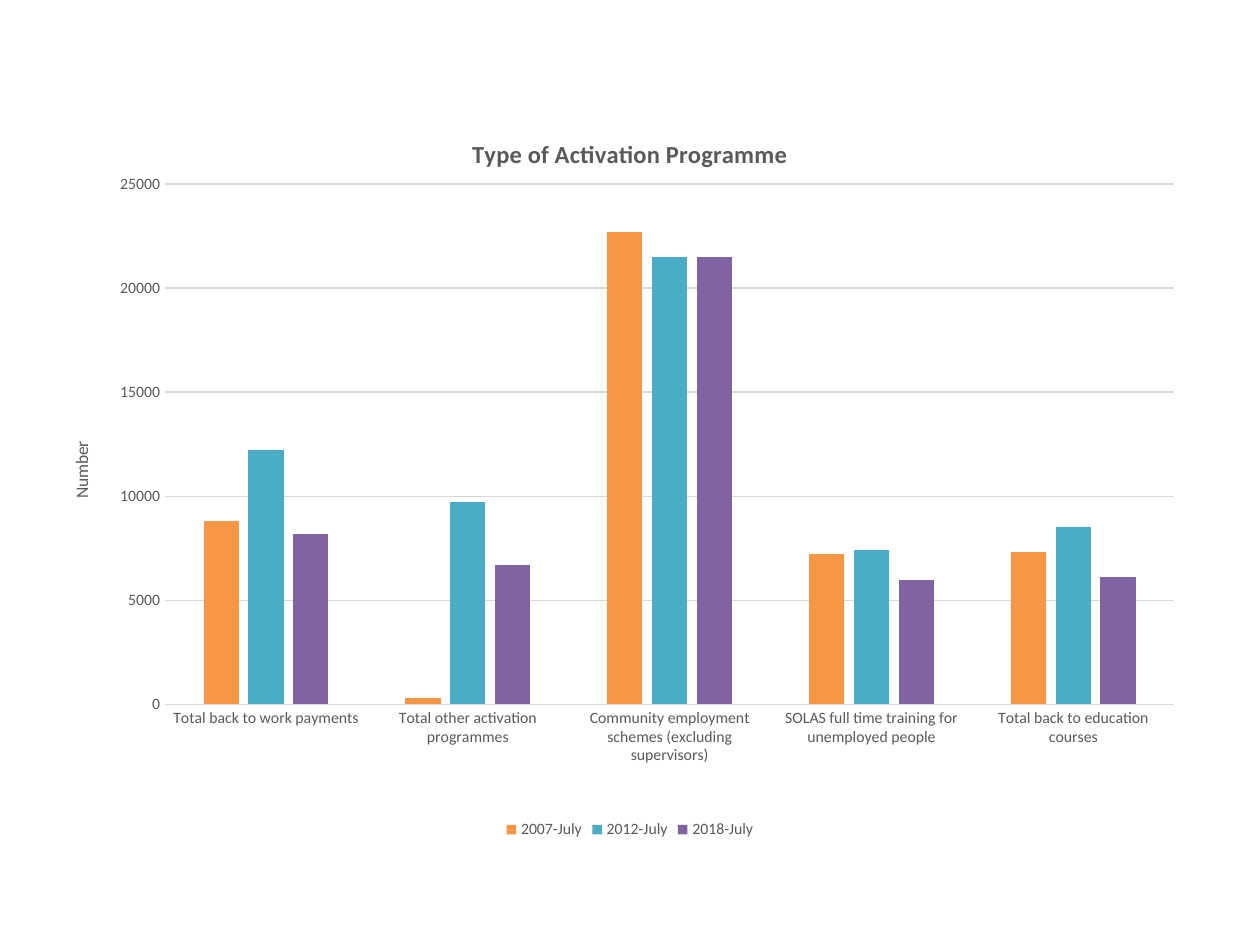
import pptx
import pptx.chart.data
import pptx.dml.color
import pptx.enum.chart
import pptx.oxml
import pptx.oxml.ns
import pptx.util

Pt = pptx.util.Pt
FONT = "Calibri"
GREY, RULE = "595959", "D9D9D9"
TITLE = "Type of Activation Programme"
AXIS_TITLE = "Number"
CATEGORIES = [
    "Total back to work payments",
    "Total other activation programmes",
    "Community employment schemes (excluding supervisors)",
    "SOLAS full time training for unemployed people",
    "Total back to education courses",
]
SERIES = [
    ("2007-July", "F79646", [8800, 300, 22700, 7200, 7300]),
    ("2012-July", "4BACC6", [12200, 9700, 21500, 7400, 8500]),
    ("2018-July", "8064A2", [8200, 6700, 21500, 6000, 6100]),
]
PLOT_AREA = {"x": 0.09, "y": 0.1, "w": 0.89, "h": 0.71}


def colour(value):
    return pptx.dml.color.RGBColor.from_string(value)


def style_font(font, size, bold=False):
    font.name = FONT
    font.size = Pt(size)
    font.bold = bold
    font.color.rgb = colour(GREY)


def style_line(line):
    line.color.rgb = colour(RULE)
    line.width = Pt(0.75)


def write_title(owner, text, size, bold=False):
    paragraph = owner.text_frame.paragraphs[0]
    run = paragraph.add_run()
    run.text = text
    style_font(run.font, size, bold)


def place_plot(chart, area):
    plot_area = chart.plots[0]._element.getparent()
    for layout in plot_area.findall(pptx.oxml.ns.qn("c:layout")):
        plot_area.remove(layout)
    modes = "".join(f'<c:{key}Mode val="edge"/>' for key in "xy")
    sizes = "".join(f'<c:{key} val="{value}"/>' for key, value in area.items())
    plot_area.insert(0, pptx.oxml.parse_xml(
        f'<c:layout {pptx.oxml.ns.nsdecls("c")}><c:manualLayout>'
        f'<c:layoutTarget val="inner"/>{modes}{sizes}'
        '</c:manualLayout></c:layout>'))


def add_programme_chart(slide):
    data = pptx.chart.data.CategoryChartData()
    data.categories = CATEGORIES
    for name, _, values in SERIES:
        data.add_series(name, values)
    chart = slide.shapes.add_chart(
        pptx.enum.chart.XL_CHART_TYPE.COLUMN_CLUSTERED,
        Pt(36), Pt(63.25), Pt(648), Pt(419), data).chart
    style_font(chart.font, 9)

    chart.has_title = True
    write_title(chart.chart_title, TITLE, 14, True)
    chart.chart_title.include_in_layout = False
    chart.has_legend = True
    chart.legend.position = pptx.enum.chart.XL_LEGEND_POSITION.BOTTOM
    chart.legend.include_in_layout = False
    style_font(chart.legend.font, 9)

    plot = chart.plots[0]
    plot.gap_width = 219
    plot.overlap = -27
    plot.vary_by_categories = False
    for series, (_, fill, _) in zip(plot.series, SERIES):
        series.format.fill.solid()
        series.format.fill.fore_color.rgb = colour(fill)
        series.invert_if_negative = False

    for axis in (chart.category_axis, chart.value_axis):
        axis.major_tick_mark = pptx.enum.chart.XL_TICK_MARK.NONE
        axis.minor_tick_mark = pptx.enum.chart.XL_TICK_MARK.NONE
        style_font(axis.tick_labels.font, 9)
    style_line(chart.category_axis.format.line)

    value_axis = chart.value_axis
    value_axis.minimum_scale = 0
    value_axis.maximum_scale = 25000
    value_axis.major_unit = 5000
    value_axis.format.line.fill.background()
    value_axis.has_major_gridlines = True
    style_line(value_axis.major_gridlines.format.line)
    write_title(value_axis.axis_title, AXIS_TITLE, 10)
    value_axis.axis_title.text_frame._txBody.bodyPr.set("rot", "-5400000")
    place_plot(chart, PLOT_AREA)


def main():
    presentation = pptx.Presentation()
    presentation.slide_width = Pt(720)
    presentation.slide_height = Pt(540)
    slide = presentation.slides.add_slide(presentation.slide_layouts[6])
    add_programme_chart(slide)
    presentation.save("out.pptx")


if __name__ == "__main__":
    main()
